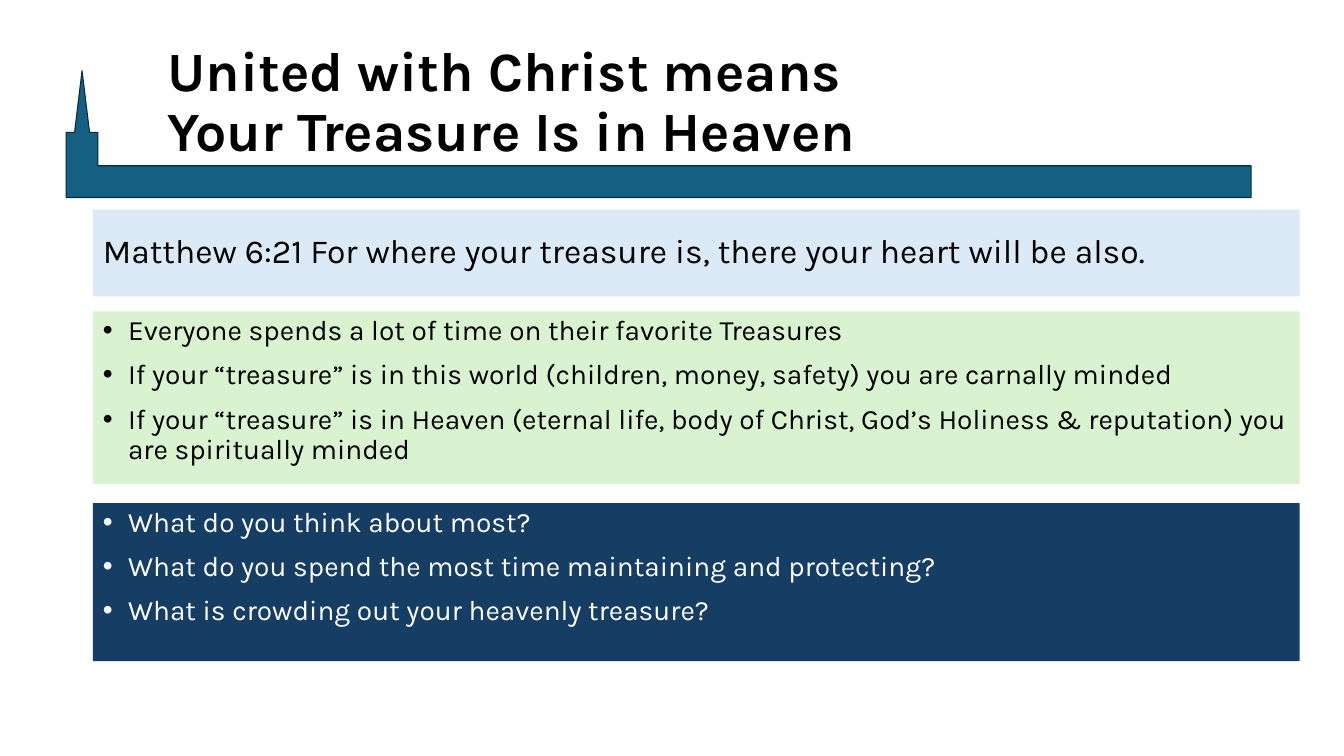
import lxml.etree
import pptx
import pptx.dml.color
import pptx.enum.shapes
import pptx.enum.text
import pptx.oxml.ns
import pptx.util
from pptx.util import Inches


def color(value):
    return pptx.dml.color.RGBColor.from_string(value)


def fill_text(shape, box, lines, size, text_color, bold=False, bulleted=False):
    shape.left, shape.top, shape.width, shape.height = [Inches(length) for length in box]
    frame = shape.text_frame
    frame.text = "\n".join(lines)
    frame.word_wrap = True
    frame.auto_size = pptx.enum.text.MSO_AUTO_SIZE.NONE
    anchors = pptx.enum.text.MSO_ANCHOR
    frame.vertical_anchor = anchors.TOP if bulleted else anchors.MIDDLE
    for index, paragraph in enumerate(frame.paragraphs):
        properties = paragraph._p.get_or_add_pPr()
        indent = Inches(0.25) if bulleted else 0
        properties.set("marL", str(indent))
        properties.set("indent", str(-indent))
        if bulleted:
            bullet_font = lxml.etree.SubElement(properties, pptx.oxml.ns.qn("a:buFont"))
            bullet_font.set("typeface", "Arial")
            bullet = lxml.etree.SubElement(properties, pptx.oxml.ns.qn("a:buChar"))
            bullet.set("char", "•")
        paragraph.alignment = pptx.enum.text.PP_ALIGN.LEFT
        paragraph.line_spacing = 0.9
        paragraph.space_before = pptx.util.Pt(10 if index else 0)
        for run in paragraph.runs:
            run.font.name = "Karla"
            run.font.size = pptx.util.Pt(size)
            run.font.bold = bold
            run.font.color.rgb = color(text_color)


presentation = pptx.Presentation()
presentation.slide_width = Inches(13.33)
presentation.slide_height = Inches(7.5)
slide = presentation.slides.add_slide(presentation.slide_layouts.get_by_name("Comparison"))
placeholders = {shape.placeholder_format.idx: shape for shape in slide.placeholders}

steeple = slide.shapes.add_shape(
    pptx.enum.shapes.MSO_SHAPE.BENT_UP_ARROW,
    Inches(0.74), Inches(0.7), Inches(11.67), Inches(1.26))
for index, adjustment in enumerate([0.25, 0.059, 0.487]):
    steeple.adjustments[index] = adjustment
steeple._element.spPr.xfrm.set("flipH", "1")
steeple.shadow.inherit = False
steeple.fill.solid()
steeple.fill.fore_color.rgb = color("156082")
steeple.line.color.rgb = color("092A39")
steeple.line.width = pptx.util.Pt(0.75)
slide.shapes._spTree.insert(2, steeple._element)

fill_text(slide.shapes.title, (1.56, 0.4, 10.86, 1.26),
          ["United with Christ means\vYour Treasure Is in Heaven"],
          39.6, "000000", bold=True)

panels = [
    (1, 2.08, 0.86, "DCEAF7", "000000", 24, False, [
        "Matthew 6:21 For where your treasure is, there your heart will be also."]),
    (2, 3.09, 1.71, "D9F2D0", "000000", 20, True, [
        "Everyone spends a lot of time on their favorite Treasures",
        "If your “treasure” is in this world (children, money, safety) you are carnally minded",
        "If your “treasure” is in Heaven (eternal life, body of Christ, God’s Holiness & reputation) "
        "you are spiritually minded"]),
    (4, 4.99, 1.57, "163E64", "FFFFFF", 20, True, [
        "What do you think about most?",
        "What do you spend the most time maintaining and protecting?",
        "What is crowding out your heavenly treasure?"]),
]
for key, top, height, background, text_color, size, bulleted, lines in panels:
    panel = placeholders[key]
    panel.fill.solid()
    panel.fill.fore_color.rgb = color(background)
    fill_text(panel, (0.92, top, 11.97, height), lines, size, text_color, bulleted=bulleted)

unused = placeholders[3]._element
unused.getparent().remove(unused)

presentation.save("out.pptx")
